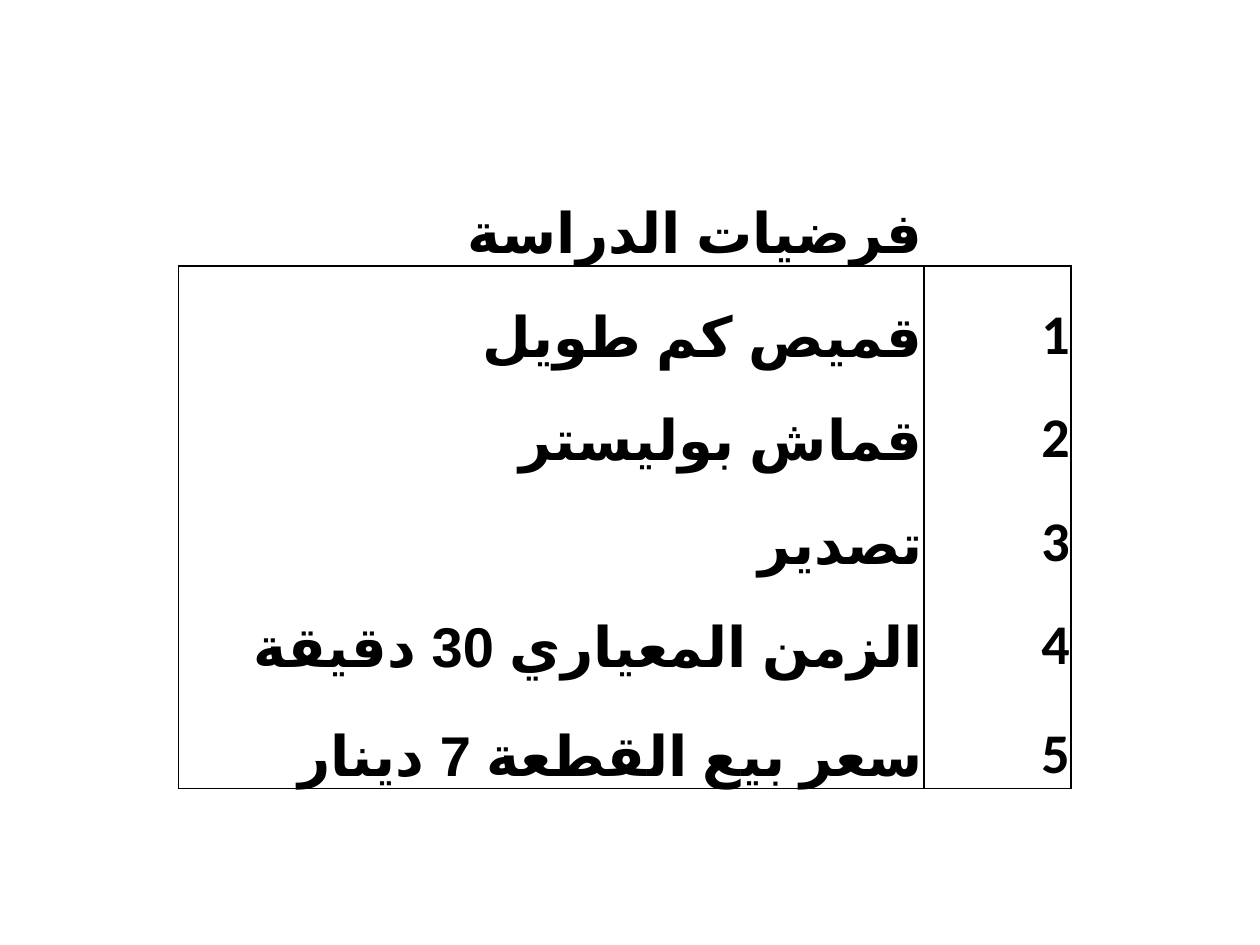
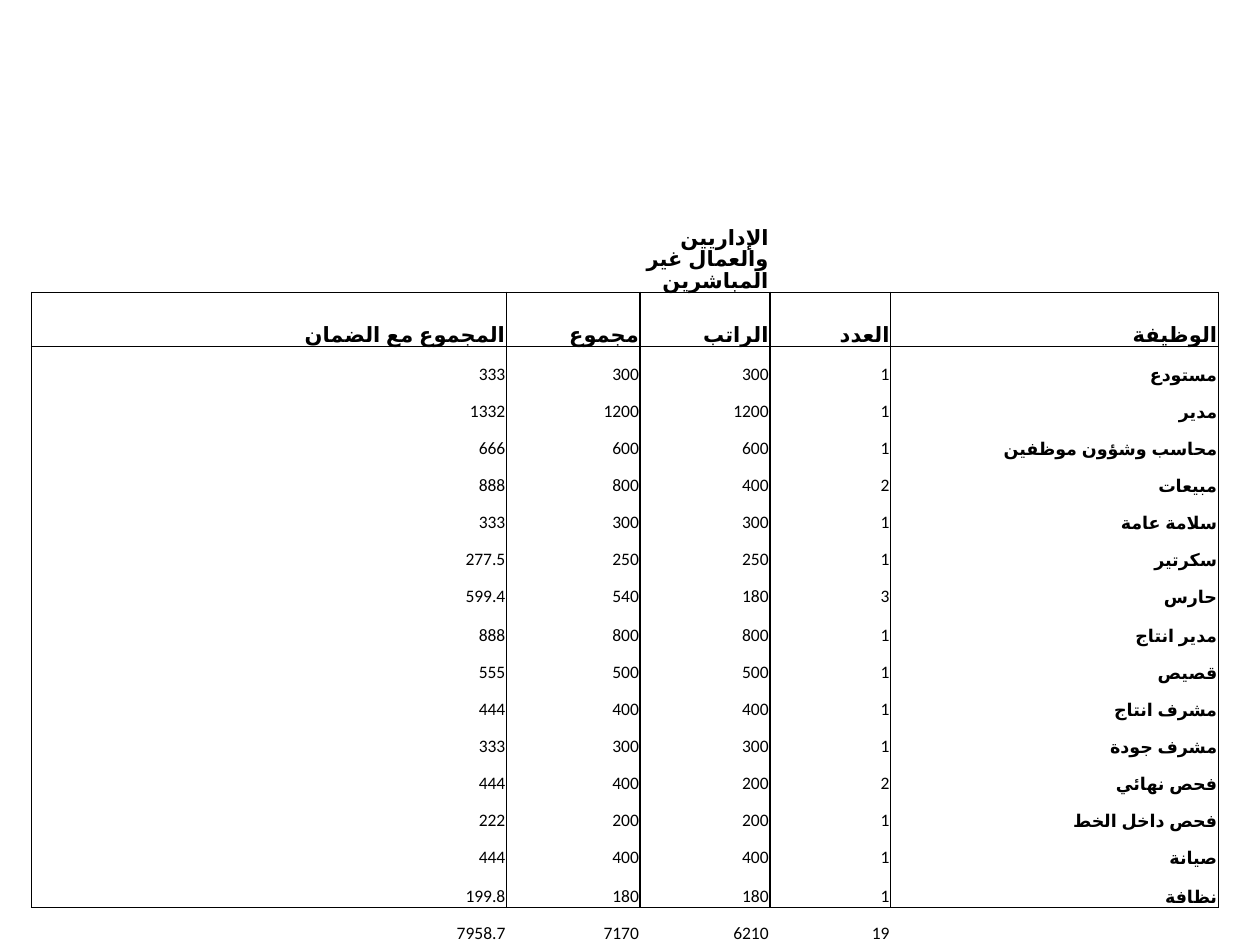
from lxml.etree import SubElement as Sub
from pptx import Presentation as Deck
from pptx.dml.color import RGBColor as Rgb
from pptx.enum.lang import MSO_LANGUAGE_ID as Lang
from pptx.enum.text import MSO_ANCHOR as Anchor, PP_ALIGN as Align
from pptx.oxml.ns import qn
from pptx.util import Inches, Pt

HUES = {"ink": "000000", "page": "FFFFFF"}
FONT = "Calibri"
SCRIPT = "Arial"
RATE = 1.11

TERMS = [
    "قميص كم طويل",
    "قماش بوليستر",
    "تصدير",
    "الزمن المعياري 30 دقيقة",
    "سعر بيع القطعة 7 دينار",
]
HEADS = ["المجموع مع الضمان", "مجموع", "الراتب", "العدد", "الوظيفة"]
STAFF = [
    ("مستودع", 1, 300),
    ("مدير", 1, 1200),
    ("محاسب وشؤون موظفين", 1, 600),
    ("مبيعات ", 2, 400),
    ("سلامة عامة", 1, 300),
    ("سكرتير", 1, 250),
    ("حارس ", 3, 180),
    ("مدير انتاج", 1, 800),
    ("قصيص", 1, 500),
    ("مشرف انتاج", 1, 400),
    ("مشرف جودة", 1, 300),
    ("فحص نهائي", 2, 200),
    ("فحص داخل الخط", 1, 200),
    ("صيانة", 1, 400),
    ("نظافة", 1, 180),
]


def add_page(deck):
    page = deck.slides.add_slide(deck.slide_layouts[6])
    page.background.fill.solid()
    page.background.fill.fore_color.rgb = Rgb.from_string(HUES["page"])
    return page


def set_edges(cell, sides):
    props = cell._tc.get_or_add_tcPr()
    for side in "LRTB":
        line = Sub(props, qn(f"a:ln{side}"), w=str(Pt(1)))
        if side in sides:
            fill = Sub(line, qn("a:solidFill"))
            Sub(fill, qn("a:srgbClr"), val=HUES["ink"])
        else:
            Sub(line, qn("a:noFill"))
    cell.fill.background()


def set_text(cell, text, size, bold):
    cell.vertical_anchor = Anchor.BOTTOM
    cell.margin_left = cell.margin_right = cell.margin_top = Inches(0.01)
    cell.margin_bottom = 0
    para = cell.text_frame.paragraphs[0]
    if not text:
        para._p.get_or_add_endParaRPr().set("sz", str(size * 100))
        return
    para.text = text
    para.alignment = Align.RIGHT
    para.line_spacing = 0.9 if len(text) > 25 else None
    font = para.runs[0].font
    font.name = FONT
    font.size = Pt(size)
    font.bold = bold
    font.color.rgb = Rgb.from_string(HUES["ink"])
    if text[0].isalpha():
        para._p.get_or_add_pPr().set("rtl", "1")
        font.language_id = Lang.ARABIC_JORDAN
        Sub(font._element, qn("a:cs"), typeface=SCRIPT)


def edge_sides(row, body, last):
    sides = "LR" if 0 < row < last else ""
    if row in (1, body, last):
        sides += "T"
    if row in (0, body - 1, last - 1):
        sides += "B"
    return sides


def fill_rows(total, count, fixed):
    rest = (total - sum(fixed.values())) / (count - len(fixed))
    return [fixed.get(r, rest) for r in range(count)]


def add_grid(page, left, top, wide, high, rows, body, sizes, heavy):
    shape = page.shapes.add_table(
        len(rows), len(wide), Inches(left), Inches(top),
        Inches(sum(wide)), Inches(sum(high)))
    grid = shape.table
    grid.first_row = grid.horz_banding = False
    for col, width in zip(grid.columns, wide):
        col.width = Inches(width)
    for row, height in zip(grid.rows, high):
        row.height = Inches(height)
    for r, row in enumerate(rows):
        size = sizes[0] if r < body else sizes[1]
        for c, text in enumerate(row):
            cell = grid.cell(r, c)
            set_edges(cell, edge_sides(r, body, len(rows) - 1))
            set_text(cell, text, size, heavy or text[:1].isalpha())


def add_terms(deck):
    rows = [["فرضيات الدراسة", ""]]
    rows += [[term, str(n)] for n, term in enumerate(TERMS, 1)]
    rows.append(["", ""])
    high = fill_rows(5.83, len(rows), {0: 0.86, 5: 0.86})
    add_grid(add_page(deck), 17 / 12, 1.25, [71 / 12, 14 / 12], high,
             rows, 1, (32, 32), True)


def pay_row(job, count, wage, total):
    cost = round(total * RATE, 1)
    return [f"{cost:g}", str(total), str(wage), str(count), job]


def add_staff(deck):
    rows = [["", "", "الإداريين والعمال غير المباشرين", "", ""], HEADS]
    rows += [pay_row(job, n, wage, n * wage) for job, n, wage in STAFF]
    rows.append(pay_row("", sum(n for _, n, _ in STAFF),
                        sum(wage for _, _, wage in STAFF),
                        sum(n * wage for _, n, wage in STAFF)))
    high = fill_rows(7.17, len(rows),
                     {0: 1.99, 1: 0.43, 2: 0.31, 9: 0.31, 16: 0.31})
    add_grid(add_page(deck), 0.25, 0.33, [3.77, 1.06, 1.03, 0.96, 2.6],
             high, rows, 2, (12, 10), False)


def main():
    deck = Deck()
    deck.slide_width, deck.slide_height = Inches(10), Inches(7.5)
    add_terms(deck)
    add_staff(deck)
    deck.save("out.pptx")


if __name__ == "__main__":
    main()
